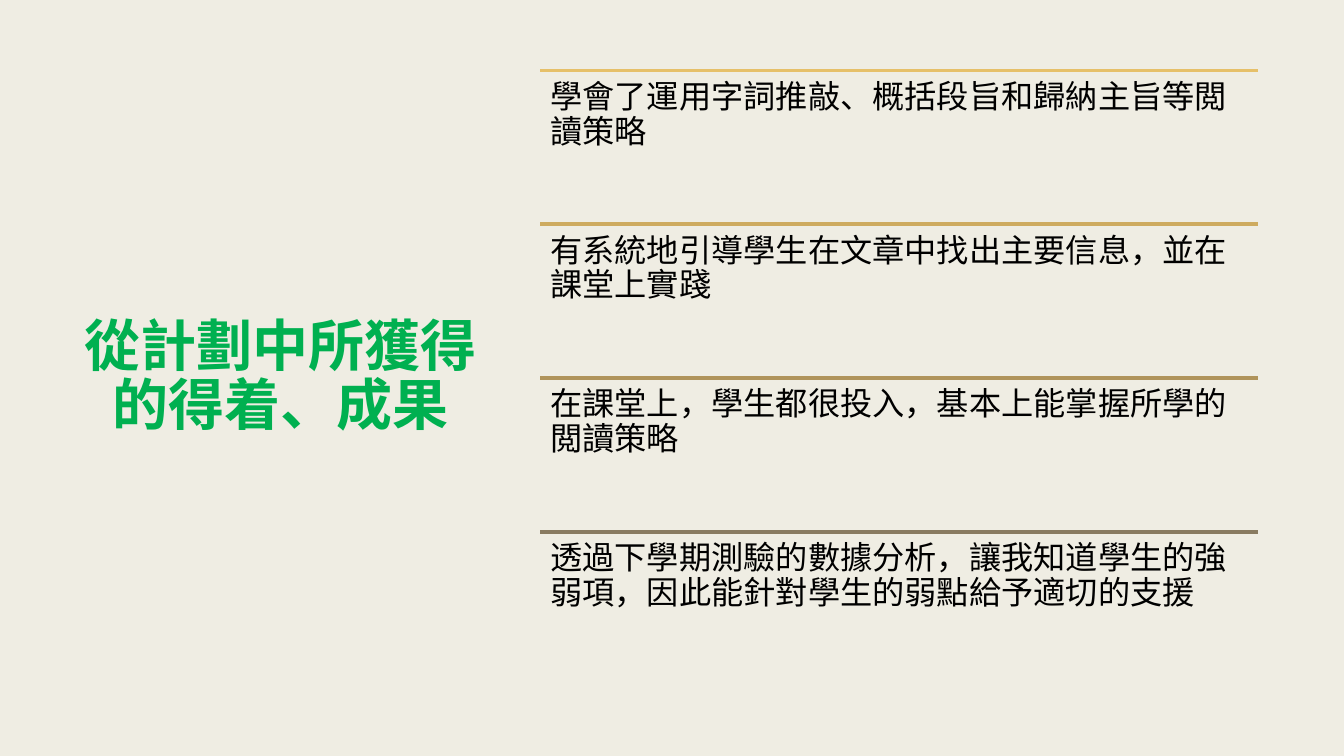
from pptx import Presentation
from pptx.dml.color import RGBColor
from pptx.enum.shapes import MSO_CONNECTOR
from pptx.enum.text import MSO_ANCHOR, MSO_AUTO_SIZE, PP_ALIGN
from pptx.oxml.ns import qn
from pptx.util import Inches, Pt
from lxml import etree

STRAIGHT = MSO_CONNECTOR.STRAIGHT
MIDDLE, TOP = MSO_ANCHOR.MIDDLE, MSO_ANCHOR.TOP
CENTER, LEFT = PP_ALIGN.CENTER, PP_ALIGN.LEFT
NO_AUTOFIT = MSO_AUTO_SIZE.NONE

CREAM = RGBColor(0xEF, 0xED, 0xE3)
GREEN = RGBColor(0x00, 0xB0, 0x50)
BLACK = RGBColor(0x00, 0x00, 0x00)
GOLD = RGBColor(0xE6, 0xC0, 0x69)
OCHRE = RGBColor(0xCE, 0xAB, 0x5F)
BRONZE = RGBColor(0xB0, 0x94, 0x5B)
TAUPE = RGBColor(0x89, 0x7B, 0x61)

TITLE = "從計劃中所獲得的得着、成果"
OUTCOMES = [
    ("學會了運用字詞推敲、概括段旨和歸納主旨等閲讀策略", GOLD),
    ("有系統地引導學生在文章中找出主要信息，並在課堂上實踐", OCHRE),
    ("在課堂上，學生都很投入，基本上能掌握所學的閲讀策略", BRONZE),
    ("透過下學期測驗的數據分析，讓我知道學生的強弱項，因此能針對學生的弱點給予適切的支援", TAUPE),
]

# Regions: left, top, width, height in inches
TITLE_BOX = (0.7, 0.7, 4.17, 6.1)
OUTCOMES_BOX = (5.36, 0.7, 7.12, 6.1)


def write_text(shape, text, font_name, size, color, bold=False,
               align=LEFT, anchor=TOP, spacing=0.9):
    frame = shape.text_frame
    frame.word_wrap = True
    frame.auto_size = NO_AUTOFIT
    frame.vertical_anchor = anchor
    paragraph = frame.paragraphs[0]
    paragraph.alignment = align
    paragraph.line_spacing = spacing
    run = paragraph.add_run()
    run.text = text
    run.font.name = font_name
    run.font.size = Pt(size)
    run.font.bold = bold
    run.font.color.rgb = color


def add_title(slide, box):
    title = slide.shapes.title
    title.left, title.top, title.width, title.height = map(Inches, box)
    write_text(title, TITLE, "Arial", 40, GREEN, bold=True,
               align=CENTER, anchor=MIDDLE, spacing=0.89)


def add_rule(slide, left, top, width, color):
    rule = slide.shapes.add_connector(
        STRAIGHT, Inches(left), Inches(top), Inches(left + width), Inches(top))
    rule.line.color.rgb = color
    rule.line.width = Pt(2.75)
    etree.SubElement(rule.element.spPr, qn("a:effectLst"))


def add_outcomes(slide, box):
    left, top, width, height = box
    row_height = height / len(OUTCOMES)
    for row, (text, color) in enumerate(OUTCOMES):
        row_top = top + row * row_height
        add_rule(slide, left, row_top, width, color)
        text_box = slide.shapes.add_textbox(
            Inches(left), Inches(row_top), Inches(width), Inches(row_height))
        frame = text_box.text_frame
        frame.margin_left = frame.margin_right = Inches(0.1)
        frame.margin_top = frame.margin_bottom = Inches(0.1)
        write_text(text_box, text, "Lato", 23, BLACK)


def main():
    presentation = Presentation()
    presentation.slide_width = Inches(13.33)
    presentation.slide_height = Inches(7.5)
    title_only = presentation.slide_layouts.get_by_name("Title Only")
    slide = presentation.slides.add_slide(title_only)

    # Page colour
    background = slide.background.fill
    background.solid()
    background.fore_color.rgb = CREAM

    # Title on the left, ruled outcomes on the right
    add_title(slide, TITLE_BOX)
    add_outcomes(slide, OUTCOMES_BOX)
    presentation.save("out.pptx")


if __name__ == "__main__":
    main()
